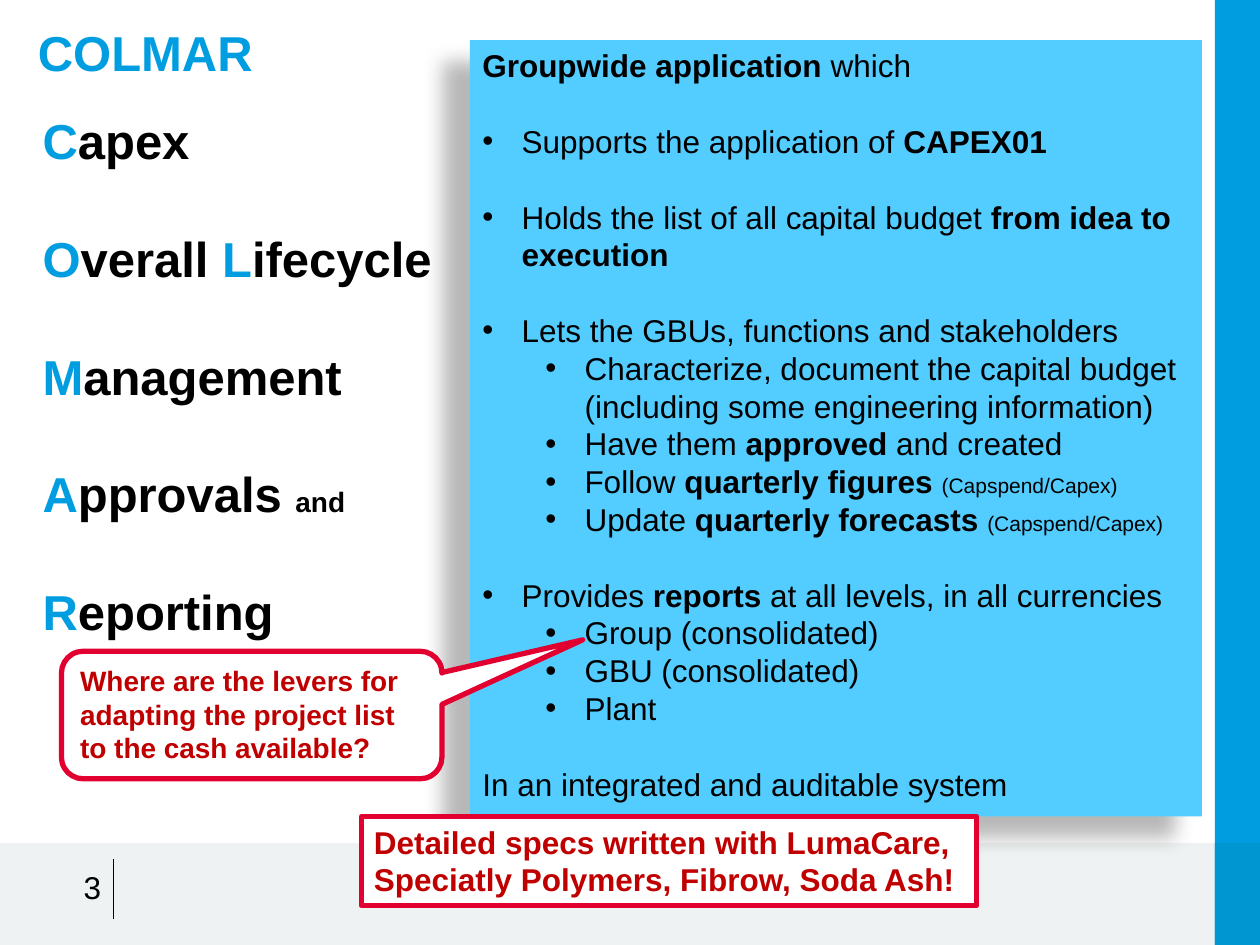
import dataclasses

import lxml.etree
import pptx
import pptx.dml.color
import pptx.enum.shapes
import pptx.enum.text
import pptx.oxml
import pptx.oxml.ns
import pptx.util

Cm, Pt = pptx.util.Cm, pptx.util.Pt
SHAPE = pptx.enum.shapes.MSO_SHAPE
ANCHOR = pptx.enum.text.MSO_ANCHOR
ALIGN = pptx.enum.text.PP_ALIGN
qn = pptx.oxml.ns.qn


@dataclasses.dataclass(frozen=True)
class Theme:
    font: str = "Arial"
    blue: str = "009EE0"
    corner: str = "0096D2"
    panel: str = "53CCFF"
    footer: str = "BDC7C8"
    outline: str = "E20031"
    alert: str = "C00000"
    black: str = "000000"
    white: str = "FFFFFF"
    heading: int = 28
    body: int = 18
    callout: int = 16
    small: int = 12


theme = Theme()
rgb = pptx.dml.color.RGBColor.from_string


def add_run(p, text, size=theme.body, bold=False, color=theme.black):
    r = p.add_run()
    r.text = text
    r.font.name = theme.font
    r.font.size = Pt(size)
    r.font.bold = bold
    r.font.color.rgb = rgb(color)


def add_box(kind, place, fill, outline=None):
    """Add a filled shape without shadow; place is left, top, width, height in cm."""
    sp = s.shapes.add_shape(kind, *map(Cm, place))
    sp.shadow.inherit = False
    sp.fill.solid()
    sp.fill.fore_color.rgb = rgb(fill)
    if outline:
        sp.line.color.rgb = rgb(outline)
        sp.line.width = Pt(3)
    else:
        sp.line.fill.background()
    return sp


prs = pptx.Presentation()
prs.slide_width, prs.slide_height = Cm(25.4), Cm(19.05)
s = prs.slides.add_slide(prs.slide_layouts[1])

# Page bands, behind the placeholders
bands = [
    ((0, 16.99, 25.4, 2.06), theme.footer),
    ((24.49, 0, 0.91, 19.05), theme.blue),
    ((24.49, 16.99, 0.91, 2.06), theme.corner),
]
for i, (place, color) in enumerate(bands):
    sp = add_box(SHAPE.RECTANGLE, place, color)
    if color == theme.footer:
        clr = sp.fill._xPr.find(".//" + qn("a:srgbClr"))
        lxml.etree.SubElement(clr, qn("a:alpha"), val="23000")
    s.shapes._spTree.insert(2 + i, sp._element)

# Title
title = s.shapes.title
title.left, title.top, title.width, title.height = map(Cm, (0.51, 0.41, 22.86, 2.16))
title.text_frame.vertical_anchor = ANCHOR.TOP
p = title.text_frame.paragraphs[0]
p.alignment = ALIGN.LEFT
p.line_spacing = 0.95
add_run(p, "COLMAR", theme.heading, True, theme.blue)

# Acronym: the initials are blue
acronym = [["Capex"], ["Overall ", "Lifecycle"], ["Management"], ["Approvals "], ["Reporting"]]
tf = s.shapes.add_textbox(*map(Cm, (0.61, 2.11, 8.97, 11.02))).text_frame
tf.word_wrap = True
for i, words in enumerate(acronym):
    p = tf.add_paragraph() if i else tf.paragraphs[0]
    if i:
        p.space_before = Pt(theme.heading * 1.2)
    for word in words:
        add_run(p, word[0], theme.heading, True, theme.blue)
        add_run(p, word[1:], theme.heading, True)
    if words == ["Approvals "]:
        add_run(p, "and", theme.callout, True)

# Description panel: level (None = no bullet), gap above, runs of text, bold, size
big, small = theme.body, theme.small
lines = [
    (None, False, [("Groupwide application ", True, big), ("which", False, big)]),
    (0, True, [("Supports the application of ", False, big), ("CAPEX01", True, big)]),
    (0, True, [("Holds the list of all capital budget ", False, big),
               ("from idea to execution", True, big)]),
    (0, True, [("Lets the GBUs, functions and stakeholders", False, big)]),
    (1, False, [("Characterize, document the capital budget "
                 "(including some engineering information)", False, big)]),
    (1, False, [("Have them ", False, big), ("approved", True, big),
                (" and created", False, big)]),
    (1, False, [("Follow ", False, big), ("quarterly figures ", True, big),
                ("(Capspend/Capex)", False, small)]),
    (1, False, [("Update ", False, big), ("quarterly forecasts ", True, big),
                ("(Capspend/Capex)", False, small)]),
    (0, True, [("Provides ", False, big), ("reports", True, big),
               (" at all levels, in all currencies", False, big)]),
    (1, False, [("Group (consolidated)", False, big)]),
    (1, False, [("GBU (consolidated)", False, big)]),
    (1, False, [("Plant", False, big)]),
    (None, True, [("In an integrated and auditable system", False, big)]),
]
panel = s.placeholders[1]
panel.left, panel.top, panel.width, panel.height = map(Cm, (9.47, 0.81, 14.76, 15.65))
panel.fill.solid()
panel.fill.fore_color.rgb = rgb(theme.panel)
panel._element.spPr.append(pptx.oxml.parse_xml(
    '<a:effectLst xmlns:a="http://schemas.openxmlformats.org/drawingml/2006/main">'
    f'<a:outerShdw blurRad="{Pt(11.8)}" dist="{Pt(19.7)}" dir="{141 * 60000}" rotWithShape="0">'
    f'<a:srgbClr val="{theme.black}"><a:alpha val="28000"/></a:srgbClr>'
    '</a:outerShdw></a:effectLst>'))
tf = panel.text_frame
tf.auto_size = pptx.enum.text.MSO_AUTO_SIZE.NONE
for i, (level, gap, runs) in enumerate(lines):
    p = tf.add_paragraph() if i else tf.paragraphs[0]
    p.level = level or 0
    p.space_before = Pt(big * 1.2 if gap else 0)
    pPr = p._p.get_or_add_pPr()
    if level is None:
        pPr.set("marL", "0")
        pPr.set("indent", "0")
        lxml.etree.SubElement(pPr, qn("a:buNone"))
    else:
        pPr.set("marL", str(Cm(0.79 + 1.27 * level)))
        pPr.set("indent", str(-Cm(0.79)))
        lxml.etree.SubElement(pPr, qn("a:buFont"), typeface=theme.font)
        lxml.etree.SubElement(pPr, qn("a:buChar"), char="•")
    for text, bold, size in runs:
        add_run(p, text, size, bold)

# Slide number and its rule
rule = s.shapes.add_connector(pptx.enum.shapes.MSO_CONNECTOR.STRAIGHT,
                              Cm(2.29), Cm(17.32), Cm(2.29), Cm(18.52))
rule.line.color.rgb = rgb(theme.black)
rule.line.width = Pt(0.75)
lxml.etree.SubElement(rule._element.spPr, qn("a:effectLst"))
tf = s.shapes.add_textbox(*map(Cm, (0.64, 17.25, 1.65, 1.24))).text_frame
tf.word_wrap = True
tf.vertical_anchor = ANCHOR.MIDDLE
p = tf.paragraphs[0]
p.alignment = ALIGN.RIGHT
add_run(p, "3")

# Red notes
notes = [
    (SHAPE.RECTANGLE, (7.29, 16.46, 12.4, 1.8), theme.body,
     "Detailed specs written with LumaCare, Speciatly Polymers, Fibrow, Soda Ash!"),
    (SHAPE.ROUNDED_RECTANGULAR_CALLOUT, (1.24, 13.13, 7.67, 2.57), theme.callout,
     "Where are the levers for adapting the project list to the cash available?"),
]
for kind, place, size, text in notes:
    sp = add_box(kind, place, theme.white, theme.outline)
    if kind == SHAPE.ROUNDED_RECTANGULAR_CALLOUT:
        for i, value in enumerate((0.87, -0.59, 0.17)):
            sp.adjustments[i] = value
    tf = sp.text_frame
    tf.word_wrap = True
    tf.vertical_anchor = ANCHOR.TOP
    p = tf.paragraphs[0]
    p.alignment = ALIGN.LEFT
    add_run(p, text, size, True, theme.alert)

prs.save("out.pptx")
